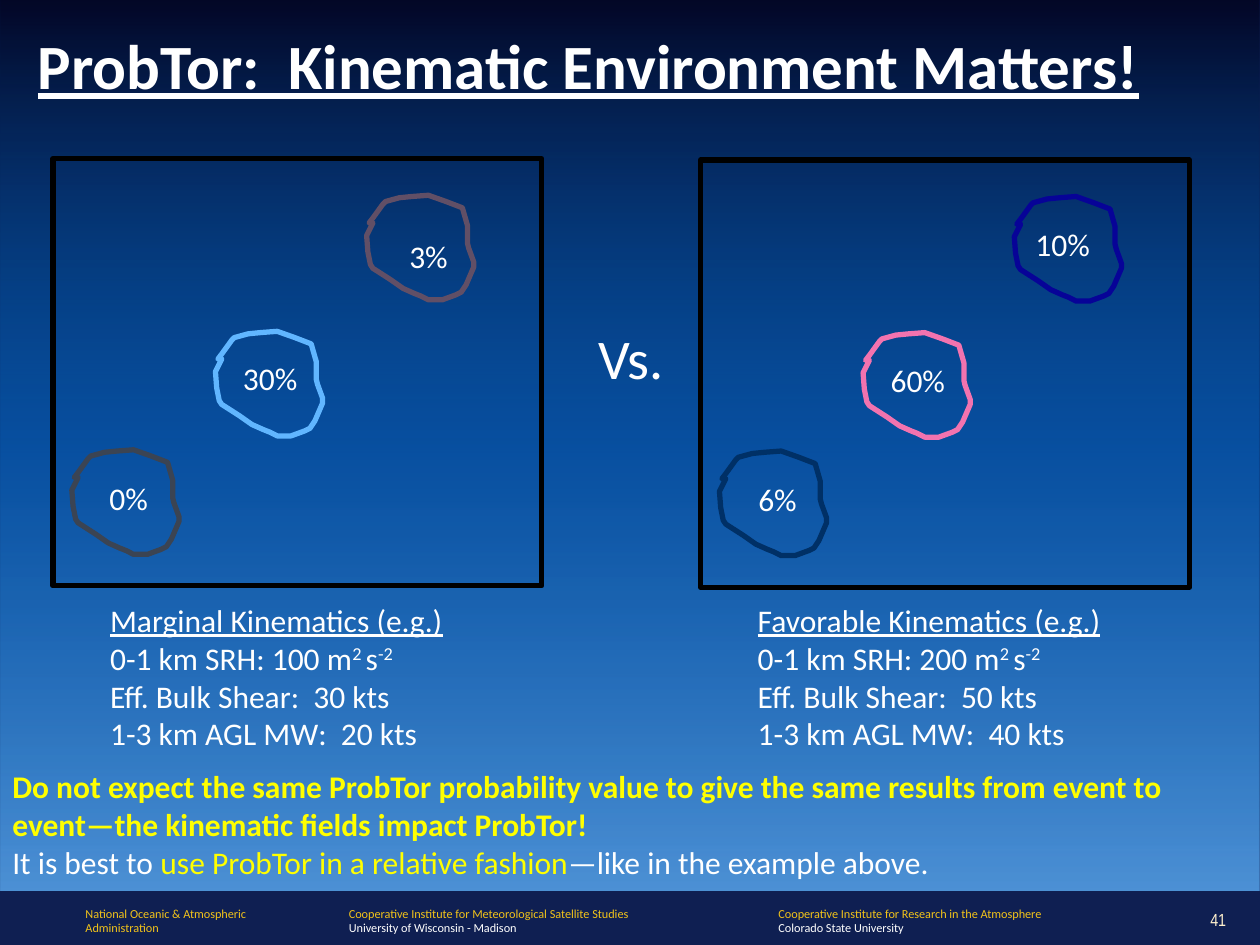
from dataclasses import dataclass

from lxml.etree import SubElement
from pptx import Presentation
from pptx.dml.color import RGBColor
from pptx.enum.shapes import MSO_SHAPE as Preset
from pptx.enum.text import MSO_ANCHOR as Anchor, PP_ALIGN as Align
from pptx.oxml.ns import qn
from pptx.util import Emu, Inches, Pt

COLUMNS, ROWS = 100, 75


@dataclass(frozen=True)
class Theme:
    font: str = "Calibri"
    number_font: str = "Arial Narrow"
    navy: str = "0F1F52"
    white: str = "FFFFFF"
    black: str = "000000"
    yellow: str = "FFFF00"
    gold: str = "F2C31A"
    cream: str = "FFF1CE"
    sky: tuple = ((0, "01021E", 85), (50, "007EEB", 50), (100, "61B6FF", 75))
    title: int = 36
    versus: int = 32
    body: int = 18
    number: int = 10
    footer: int = 7
    stroke: int = 3


THEME = Theme()


@dataclass(frozen=True)
class Area:
    left: float
    top: float
    width: float
    height: float


@dataclass(frozen=True)
class Span:
    text: str
    color: str = THEME.white
    bold: bool = False
    underline: bool = False
    raised: bool = False


@dataclass(frozen=True)
class Storm:
    label: str
    color: str
    left: float
    top: float
    label_shift: tuple[float, float]
    label_width: float


@dataclass(frozen=True)
class Panel:
    left: float
    top: float
    storms: tuple[Storm, ...]
    heading: str
    helicity: int
    shear: int
    wind: int


STORM_OUTLINE = (
    (4.9, 0), (3.6, 0.1), (2.6, 0.2), (1.5, 0.5), (1.3, 0.7), (0.5, 1.8),
    (0.2, 2.2), (0.5, 2.2), (0, 3.2), (0.1, 4.5), (0.3, 5.5), (0.5, 5.8),
    (1.9, 6.7), (2.9, 7.4), (3.8, 7.8), (4.3, 8), (4.9, 8.3), (6, 8.3),
    (7.1, 7.9), (7.5, 7.7), (7.9, 7.1), (8.5, 5.7), (8.5, 5.3), (8.1, 4.2),
    (8, 3.8), (8, 2.4), (7.6, 1), (6.3, 0.5),
)

PANELS = (
    Panel(4.2, 12.6, (
        Storm("0%", "3B4453", 1.5, 23.1, (2, 1.8), 6),
        Storm("30%", "61B6FF", 12.9, 13.7, (1.2, 1.7), 7.3),
        Storm("3%", "614F66", 24.9, 2.9, (2.4, 2.8), 6),
    ), "Marginal Kinematics (e.g.)", 100, 30, 20),
    Panel(55.6, 12.7, (
        Storm("6%", "003066", 1.5, 23.1, (2.1, 1.8), 6),
        Storm("60%", "F273AF", 12.9, 13.7, (1.2, 1.8), 7.3),
        Storm("10%", "070397", 24.9, 2.9, (0.7, 1.8), 8.4),
    ), "Favorable Kinematics (e.g.)", 200, 50, 40),
)

FOOTERS = (
    (Area(5.8, 71.4, 15.8, 3.4), "National Oceanic & Atmospheric", "Administration", THEME.gold),
    (Area(26.7, 71.4, 29.2, 3.4), "Cooperative Institute for Meteorological Satellite Studies",
     "University of Wisconsin - Madison", THEME.white),
    (Area(60.8, 71.4, 29.2, 3.4), "Cooperative Institute for Research in the Atmosphere",
     "Colorado State University", THEME.white),
)


def place(deck, area: Area) -> tuple[Emu, Emu, Emu, Emu]:
    column, row = deck.slide_width / COLUMNS, deck.slide_height / ROWS
    return (Emu(round(area.left * column)), Emu(round(area.top * row)),
            Emu(round(area.width * column)), Emu(round(area.height * row)))


def write(box, lines, size: int, font: str = THEME.font, align=Align.LEFT, anchor=Anchor.TOP) -> None:
    frame = box.text_frame
    frame.word_wrap = True
    frame.vertical_anchor = anchor
    for index, line in enumerate(lines):
        para = frame.add_paragraph() if index else frame.paragraphs[0]
        para.alignment = align
        for span in line:
            run = para.add_run()
            run.text = span.text
            run.font.name = font
            run.font.size = Pt(size)
            run.font.bold = span.bold
            run.font.underline = span.underline
            run.font.color.rgb = RGBColor.from_string(span.color)
            if span.raised:
                run.font._element.set("baseline", "30000")


def add_text(deck, page, area: Area, lines, size: int, **style) -> None:
    write(page.shapes.add_textbox(*place(deck, area)), lines, size, **style)


def outline(shape, color: str) -> None:
    shape.shadow.inherit = False
    shape.fill.background()
    shape.line.color.rgb = RGBColor.from_string(color)
    shape.line.width = Pt(THEME.stroke)


def add_sky(deck, page) -> None:
    sky = page.shapes.add_shape(Preset.RECTANGLE, *place(deck, Area(0, -0.2, 100, 70.9)))
    sky.shadow.inherit = False
    sky.line.fill.background()
    sky.fill.gradient()
    sky.fill.gradient_angle = 270
    stops = sky._element.spPr.find(qn("a:gradFill")).find(qn("a:gsLst"))
    for stop in list(stops):
        stops.remove(stop)
    for position, color, opacity in THEME.sky:
        stop = SubElement(stops, qn("a:gs"), pos=str(position * 1000))
        tint = SubElement(stop, qn("a:srgbClr"), val=color)
        SubElement(tint, qn("a:alpha"), val=str(opacity * 1000))


def add_storm(deck, page, panel: Panel, storm: Storm) -> None:
    left, top = panel.left + storm.left, panel.top + storm.top
    points = [place(deck, Area(left + x, top + y, 0, 0))[:2] for x, y in STORM_OUTLINE]
    builder = page.shapes.build_freeform(*points[0])
    builder.add_line_segments(points[1:], close=True)
    outline(builder.convert_to_shape(), storm.color)
    shift_x, shift_y = storm.label_shift
    add_text(deck, page, Area(left + shift_x, top + shift_y, storm.label_width, 4),
             [[Span(storm.label)]], THEME.body)


def add_panel(deck, page, panel: Panel) -> None:
    area = Area(panel.left, panel.top, 38.8, 33.9)
    outline(page.shapes.add_shape(Preset.RECTANGLE, *place(deck, area)), THEME.black)
    for storm in panel.storms:
        add_storm(deck, page, panel, storm)
    add_text(deck, page, Area(panel.left + 3.55, 47.2, 31.1, 13.1), [
        [Span(panel.heading, underline=True)],
        [Span(f"0-1 km SRH: {panel.helicity} m"), Span("2 ", raised=True),
         Span("s"), Span("-2", raised=True)],
        [Span(f"Eff. Bulk Shear:  {panel.shear} kts")],
        [Span(f"1-3 km AGL MW:  {panel.wind} kts")],
    ], THEME.body)


def main() -> None:
    deck = Presentation()
    deck.slide_width, deck.slide_height = Inches(10), Inches(7.5)
    page = deck.slides.add_slide(deck.slide_layouts.get_by_name("Title Only"))
    page.background.fill.solid()
    page.background.fill.fore_color.rgb = RGBColor.from_string(THEME.navy)
    add_sky(deck, page)

    title = page.shapes.title
    title.left, title.top, title.width, title.height = place(deck, Area(2, 1.6, 96.3, 7.1))
    write(title, [[Span("ProbTor:  Kinematic Environment Matters!", bold=True, underline=True)]],
          THEME.title)
    page.shapes._spTree.append(title._element)

    for area, name, detail, color in FOOTERS:
        add_text(deck, page, area, [[Span(name, THEME.gold)], [Span(detail, color)]], THEME.footer)
    add_text(deck, page, Area(93.3, 71.7, 5, 2.5), [[Span("41", THEME.cream)]], THEME.number,
             font=THEME.number_font, align=Align.RIGHT, anchor=Anchor.MIDDLE)

    for panel in PANELS:
        add_panel(deck, page, panel)
    add_text(deck, page, Area(46.5, 25.2, 7.6, 6.4), [[Span("Vs.")]], THEME.versus)
    add_text(deck, page, Area(0, 60.4, 98.3, 10.1), [
        [Span("Do not expect the same ProbTor probability value to give the same results "
              "from event to event—the kinematic fields impact ProbTor!", THEME.yellow, bold=True)],
        [Span("It is best to "), Span("use ProbTor in a relative fashion", THEME.yellow),
         Span("—like in the example above.")],
    ], THEME.body)
    deck.save("out.pptx")


if __name__ == "__main__":
    main()
